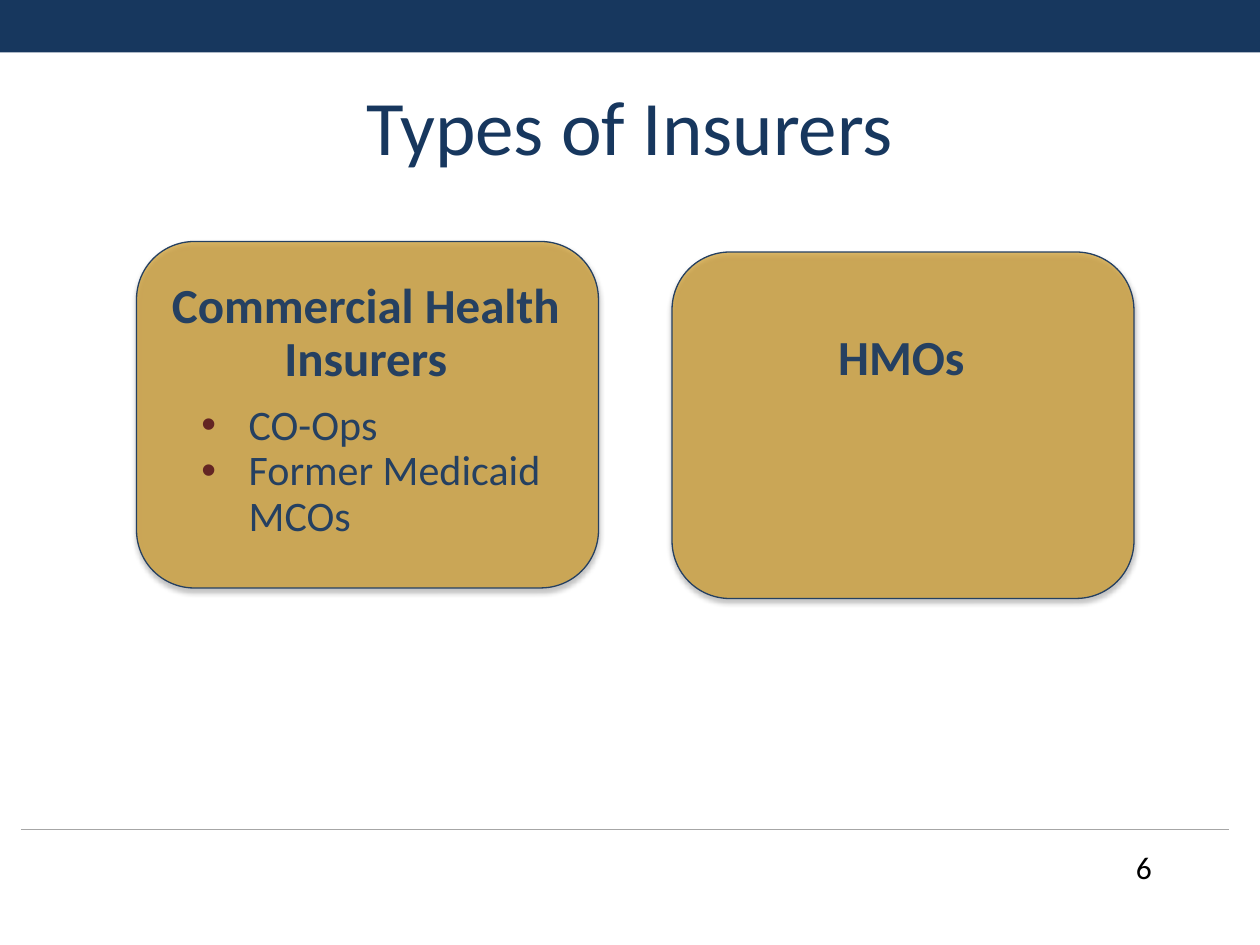
import dataclasses

import lxml.etree
import pptx
import pptx.dml.color
import pptx.enum.shapes
import pptx.enum.text
import pptx.oxml
import pptx.oxml.ns
import pptx.util

Pt = pptx.util.Pt
Align = pptx.enum.text.PP_ALIGN
Anchor = pptx.enum.text.MSO_ANCHOR
Shape = pptx.enum.shapes.MSO_SHAPE


@dataclasses.dataclass(frozen=True)
class Theme:
    font: str = "Calibri"
    navy: str = "17375E"
    ink: str = "254061"
    gold: str = "CE9821"
    gold_opacity: int = 67
    bullet: str = "632523"
    rule: str = "A6A6A6"
    black: str = "000000"
    title_size: int = 44
    heading_size: int = 28
    item_size: int = 24
    number_size: int = 18


class SlideBuilder:
    """Draws styled elements on one slide, with lengths in points."""

    def __init__(self, slide, theme):
        self.slide = slide
        self.theme = theme

    def color(self, value):
        return pptx.dml.color.RGBColor.from_string(value)

    def element(self, parent, tag, **attributes):
        return lxml.etree.SubElement(parent, pptx.oxml.ns.qn(tag), attributes)

    def format_paragraph(self, paragraph, size, color, bold=False, align=Align.LEFT):
        paragraph.alignment = align
        for run in paragraph.runs:
            run.font.name = self.theme.font
            run.font.size = Pt(size)
            run.font.bold = bold
            run.font.color.rgb = self.color(color)

    def indent(self, paragraph, margin, first_line):
        paragraph.line_spacing = 0.9
        properties = paragraph._p.get_or_add_pPr()
        properties.set("marL", str(Pt(margin)))
        properties.set("indent", str(Pt(first_line)))
        return properties

    def text_frame(self, left, top, width, height, anchor=Anchor.TOP):
        box = self.slide.shapes.add_textbox(Pt(left), Pt(top), Pt(width), Pt(height))
        box.text_frame.word_wrap = True
        box.text_frame.vertical_anchor = anchor
        return box.text_frame

    def label(self, text, left, top, width, height, size, color,
              align=Align.LEFT, anchor=Anchor.TOP):
        frame = self.text_frame(left, top, width, height, anchor)
        frame.text = text
        self.format_paragraph(frame.paragraphs[0], size, color, align=align)

    def bar(self, left, top, width, height):
        shape = self.slide.shapes.add_shape(
            Shape.RECTANGLE, Pt(left), Pt(top), Pt(width), Pt(height))
        shape.shadow.inherit = False
        shape.fill.solid()
        shape.fill.fore_color.rgb = self.color(self.theme.navy)
        shape.line.fill.background()

    def rule(self, left, right, top):
        line = self.slide.shapes.add_connector(
            pptx.enum.shapes.MSO_CONNECTOR.STRAIGHT, Pt(left), Pt(top), Pt(right), Pt(top))
        line.line.color.rgb = self.color(self.theme.rule)
        line.line.width = Pt(0.75)
        self.element(line._element.spPr, "a:effectLst")

    def card(self, left, top, width, height):
        shape = self.slide.shapes.add_shape(
            Shape.ROUNDED_RECTANGLE, Pt(left), Pt(top), Pt(width), Pt(height))
        shape.shadow.inherit = False
        shape.fill.solid()
        shape.fill.fore_color.rgb = self.color(self.theme.gold)
        shape.line.color.rgb = self.color(self.theme.ink)
        shape.line.width = Pt(0.75)
        properties = shape._element.spPr
        fill = properties.find(pptx.oxml.ns.qn("a:solidFill"))
        self.element(fill[0], "a:alpha", val=str(self.theme.gold_opacity * 1000))
        shadow = self.element(
            properties.find(pptx.oxml.ns.qn("a:effectLst")), "a:outerShdw",
            blurRad=str(Pt(3.1)), dist=str(Pt(1.8)), dir="5400000", rotWithShape="0")
        shadow_color = self.element(shadow, "a:srgbClr", val=self.theme.black)
        self.element(shadow_color, "a:alpha", val="35000")

    def card_text(self, headings, items, left, top, width, height):
        frame = self.text_frame(left, top, width, height)
        frame.text = "\n".join(headings + items)
        for index, paragraph in enumerate(frame.paragraphs):
            if index < len(headings):
                self.indent(paragraph, 40, -36)
                self.format_paragraph(paragraph, self.theme.heading_size, self.theme.ink,
                                      bold=True, align=Align.CENTER)
            else:
                properties = self.indent(paragraph, 63, -27)
                bullet_color = self.element(properties, "a:buClr")
                self.element(bullet_color, "a:srgbClr", val=self.theme.bullet)
                self.element(properties, "a:buFont", typeface="Arial")
                self.element(properties, "a:buChar", char="•")
                self.format_paragraph(paragraph, self.theme.item_size, self.theme.ink)
        frame.paragraphs[len(headings) - 1].space_after = Pt(10)


def main():
    theme = Theme()
    presentation = pptx.Presentation()
    presentation.slide_width = Pt(720)
    presentation.slide_height = Pt(540)
    slide = presentation.slides.add_slide(presentation.slide_layouts[6])
    builder = SlideBuilder(slide, theme)

    builder.bar(0, 0, 720, 30)
    builder.rule(12, 702, 474)
    builder.label("Types of Insurers", 36, 30, 648, 82, theme.title_size, theme.navy,
                  Align.CENTER, Anchor.MIDDLE)
    builder.label("6", 642, 481, 42, 29, theme.number_size, theme.black)

    insurers = [
        (78, 138, 157, 243, ["Commercial Health", "Insurers"],
         ["CO-Ops", "Former Medicaid MCOs"]),
        (384, 144, 187, 125, ["HMOs"], []),
    ]
    for left, top, text_top, text_height, headings, items in insurers:
        builder.card(left, top, 264, 198)
        builder.card_text(headings, items, left - 6, text_top, 270, text_height)

    presentation.save("out.pptx")


if __name__ == "__main__":
    main()
